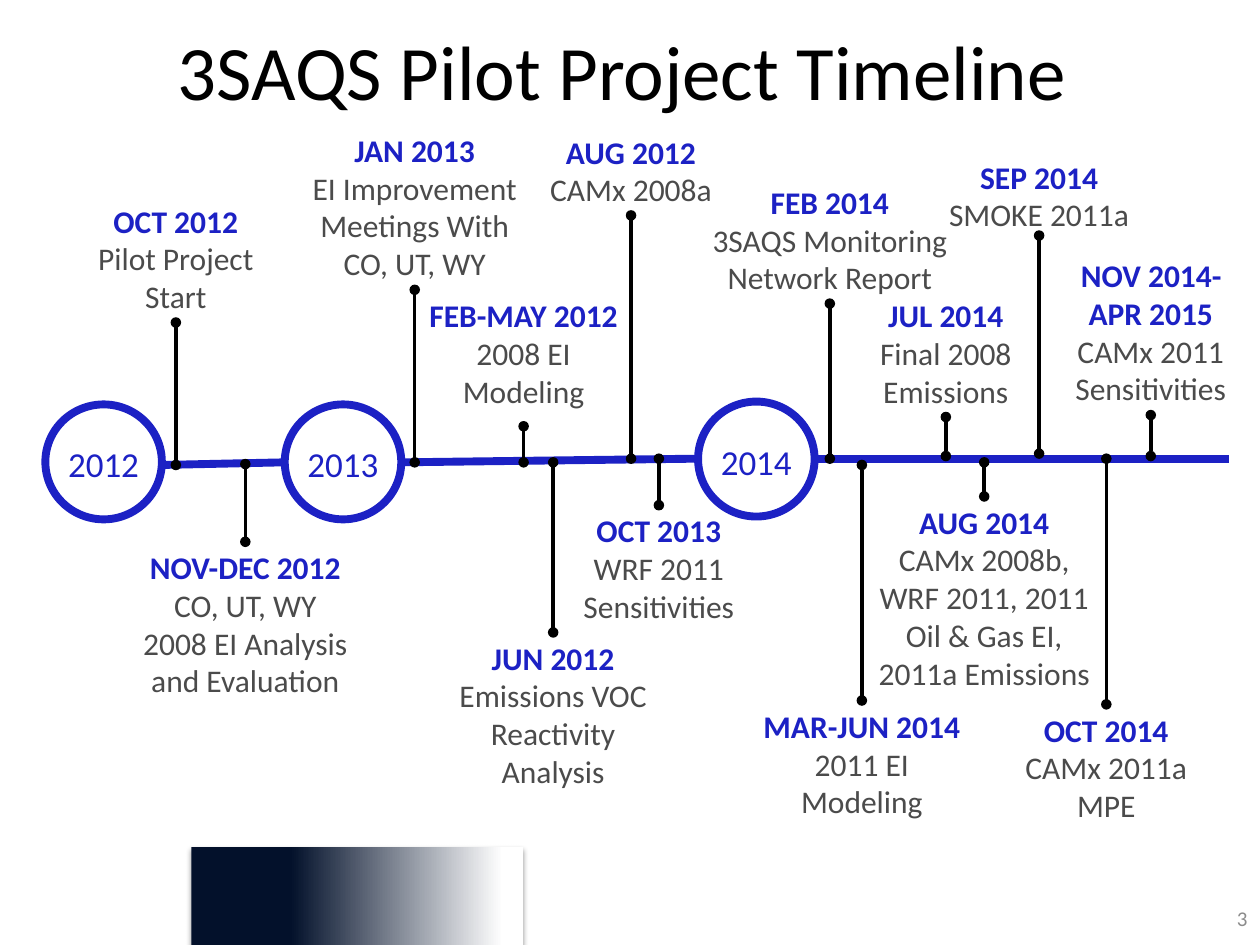
from lxml import etree
from pptx import Presentation
from pptx.dml.color import RGBColor
from pptx.enum.shapes import MSO_CONNECTOR, MSO_SHAPE
from pptx.enum.text import MSO_ANCHOR, MSO_AUTO_SIZE, PP_ALIGN
from pptx.oxml.ns import qn
from pptx.util import Pt

STRAIGHT = MSO_CONNECTOR.STRAIGHT
RECTANGLE, CIRCLE = MSO_SHAPE.RECTANGLE, MSO_SHAPE.FLOWCHART_CONNECTOR
TOP, MIDDLE = MSO_ANCHOR.TOP, MSO_ANCHOR.MIDDLE
GROW, FIXED = MSO_AUTO_SIZE.SHAPE_TO_FIT_TEXT, MSO_AUTO_SIZE.NONE
CENTER, RIGHT = PP_ALIGN.CENTER, PP_ALIGN.RIGHT

COLORS = {
    "blue": "1C21C4", "gray": "4B4B4B", "black": "000000",
    "white": "FFFFFF", "navy": "03112B", "page": "8C8C8C",
}
FONT = "Calibri"
TITLE = "3SAQS Pilot Project Timeline"
PAGE_NUMBER = "3"

# year, circle left, circle top
YEARS = [("2012", 25.9, 231.1), ("2013", 162.7, 231.1), ("2014", 398.9, 229.5)]
CIRCLE_WIDTH, CIRCLE_HEIGHT = 66.6, 65.7
YEAR_DROP, YEAR_HEIGHT = 18.4, 31.5

# x and y of both ends
AXIS = [
    (92.9, 265.7, 162.7, 264.2),
    (229.3, 264.2, 398.9, 262.1),
    (465.1, 262.1, 702, 262.1),
]

# date, description, centre x, label width, line count, label edge facing the
# axis, stem start, stem end on the axis
ABOVE = [
    ("SEP 2014", ["SMOKE 2011a"], 593.8, 124.6, 2, 137.4, 134.6, 259.2),
    ("OCT 2012", ["Pilot Project Start"], 100.5, 103.7, 3, 184.3, 184.3, 265.7),
    ("JAN 2013", ["EI Improvement", "Meetings With", "CO, UT, WY"],
     237, 139.7, 4, 165.6, 165.6, 264.2),
    ("FEB 2014", ["3SAQS Monitoring Network Report"],
     474.2, 160.6, 3, 173.5, 173.5, 262.1),
    ("JUL 2014", ["Final 2008 Emissions"], 540.5, 139.7, 3, 238.3, 238.3, 260.6),
    ("NOV 2014-APR 2015", ["CAMx 2011 Sensitivities"],
     657.6, 124.6, 4, 237.2, 237.2, 260.6),
    ("AUG 2012", ["CAMx 2008a"], 360.6, 139.7, 2, 123.1, 123.1, 262.1),
    ("FEB-MAY 2012", ["2008 EI Modeling"], 299.2, 123.8, 3, 238.3, 243.6, 264.2),
]
BELOW = [
    ("NOV-DEC 2012", ["CO, UT, WY", "2008 EI Analysis and Evaluation"],
     140.2, 139.7, 4, 309.6, 309.6, 265.2),
    ("OCT 2013", ["WRF 2011 Sensitivities"], 376.5, 139.7, 3, 288.7, 288.7, 262.1),
    ("AUG 2014", ["CAMx 2008b, WRF 2011, 2011 Oil & Gas EI,", "2011a Emissions"],
     562.4, 140.4, 5, 283.7, 283.7, 264.2),
    ("OCT 2014", ["CAMx 2011a MPE"], 632.2, 139.7, 3, 402.5, 402.5, 262.1),
    ("JUN 2012", ["Emissions VOC Reactivity Analysis"],
     316.1, 139.7, 4, 361.4, 361.4, 264.2),
    ("MAR-JUN 2014", ["2011 EI Modeling"], 492.5, 139.7, 3, 400.3, 400.3, 265.7),
]
TRANSLUCENT = {"AUG 2014": 84}
LINE_HEIGHT, LABEL_PADDING = 21.8, 7.2


def rgb(name):
    return RGBColor.from_string(COLORS[name])


def format_text(paragraph, text, align=CENTER, color="black", **font):
    paragraph.text = text
    paragraph.alignment = align
    paragraph.font.color.rgb = rgb(color)
    for attribute, value in {"name": FONT, **font}.items():
        setattr(paragraph.font, attribute, value)


def add_text(slide, box, rows, anchor=TOP, fit=GROW, opacity=None):
    """Write one paragraph per (text, format) row, on white if opacity is set."""
    place = [Pt(value) for value in box]
    if opacity:
        holder = slide.shapes.add_shape(RECTANGLE, *place)
        holder.shadow.inherit = False
        holder.line.fill.background()
        holder.fill.solid()
        holder.fill.fore_color.rgb = rgb("white")
        color = holder.fill._xPr.find(".//" + qn("a:srgbClr"))
        etree.SubElement(color, qn("a:alpha"), val=str(opacity * 1000))
    else:
        holder = slide.shapes.add_textbox(*place)
    frame = holder.text_frame
    settings = {"word_wrap": True, "auto_size": fit, "vertical_anchor": anchor}
    for attribute, value in settings.items():
        setattr(frame, attribute, value)
    for index, (text, style) in enumerate(rows):
        paragraph = frame.add_paragraph() if index else frame.paragraphs[0]
        format_text(paragraph, text, **style)


def add_line(slide, ends, color, width, dots=False):
    connector = slide.shapes.add_connector(STRAIGHT, *[Pt(value) for value in ends])
    connector.line.color.rgb = rgb(color)
    connector.line.width = Pt(width)
    if dots:
        for tag in ("a:headEnd", "a:tailEnd"):
            etree.SubElement(connector.line._ln, qn(tag), type="oval")
    etree.SubElement(connector._element.spPr, qn("a:effectLst"))


def add_fading_band(slide):
    band = slide.shapes.add_shape(RECTANGLE, Pt(109.4), Pt(483.8), Pt(189.4), Pt(56.2))
    band.line.fill.background()
    band.fill.gradient()
    band.fill.gradient_angle = 0
    stops = [(0.3, "navy"), (0.94, "white")]
    for stop, (position, color) in zip(band.fill.gradient_stops, stops):
        stop.position = position
        stop.color.rgb = rgb(color)
    band.shadow.inherit = False
    effects = band._element.spPr.find(qn("a:effectLst"))
    shadow = etree.SubElement(
        effects, qn("a:outerShdw"), blurRad=str(Pt(3.1)), dist=str(Pt(1.8)),
        dir="5400000", rotWithShape="0")
    color = etree.SubElement(shadow, qn("a:srgbClr"), val=COLORS["black"])
    etree.SubElement(color, qn("a:alpha"), val="35000")


def add_year(slide, year, left, top):
    ring = slide.shapes.add_shape(
        CIRCLE, Pt(left), Pt(top), Pt(CIRCLE_WIDTH), Pt(CIRCLE_HEIGHT))
    ring.shadow.inherit = False
    ring.fill.background()
    ring.line.color.rgb = rgb("blue")
    ring.line.width = Pt(4.5)
    add_text(slide, (left, top + YEAR_DROP, CIRCLE_WIDTH, YEAR_HEIGHT),
             [(year, {"color": "blue", "size": Pt(20)})])


def add_event(slide, event, above):
    date, description, center, width, lines, edge, start, end = event
    height = lines * LINE_HEIGHT + LABEL_PADDING
    top = edge - height if above else edge
    rows = [(date, {"color": "blue", "size": Pt(18), "bold": True})]
    rows += [(text, {"color": "gray", "size": Pt(18)}) for text in description]
    add_text(slide, (center - width / 2, top, width, height), rows,
             opacity=TRANSLUCENT.get(date))
    add_line(slide, (center, start, center, end), "black", 2, dots=True)


def main():
    deck = Presentation()
    deck.slide_width, deck.slide_height = Pt(720), Pt(540)
    slide = deck.slides.add_slide(deck.slide_layouts[5])

    add_fading_band(slide)
    add_text(slide, (683.3, 510.5, 36.7, 28.8),
             [(PAGE_NUMBER, {"align": RIGHT, "color": "page", "size": Pt(12)})],
             anchor=MIDDLE, fit=FIXED)

    title = slide.shapes.title
    place = {"left": 31.7, "top": 2.9, "width": 648, "height": 74.2}
    for attribute, value in place.items():
        setattr(title, attribute, Pt(value))
    title.text_frame.vertical_anchor = MIDDLE
    format_text(title.text_frame.paragraphs[0], TITLE, size=Pt(44))

    for year in YEARS:
        add_year(slide, *year)
    for ends in AXIS:
        add_line(slide, ends, "blue", 4.5)
    for events, above in ((ABOVE, True), (BELOW, False)):
        for event in events:
            add_event(slide, event, above)

    deck.save("out.pptx")


if __name__ == "__main__":
    main()
